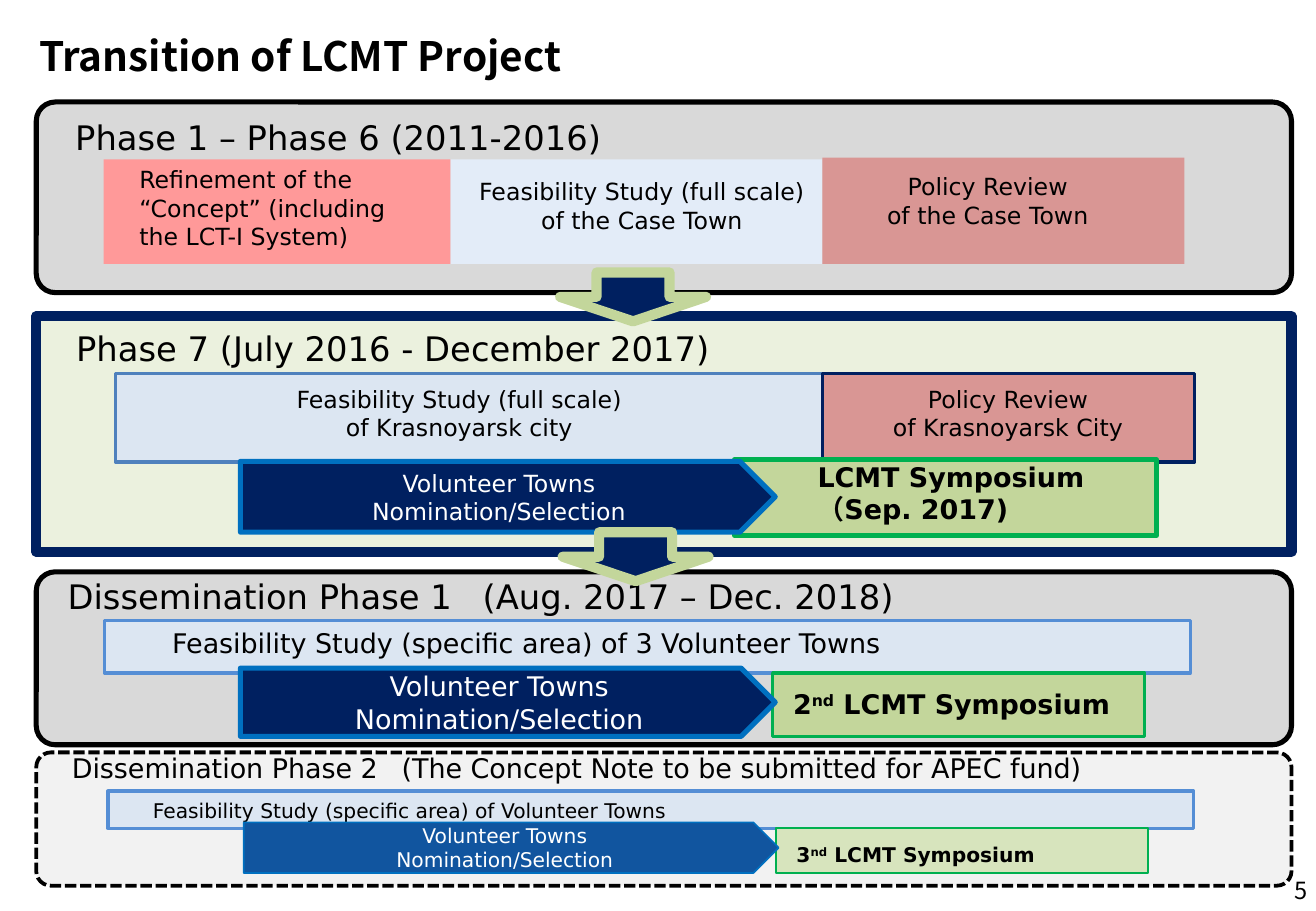
from lxml.etree import SubElement
from pptx import Presentation
from pptx.dml.color import RGBColor
from pptx.enum.dml import MSO_LINE
from pptx.enum.shapes import MSO_SHAPE as SHAPE
from pptx.enum.text import MSO_ANCHOR as ANCHOR, MSO_AUTO_SIZE, PP_ALIGN as ALIGN
from pptx.oxml.ns import qn
from pptx.util import Pt

BODY_FONT, TITLE_FONT = "DejaVu Sans", "Noto Sans CJK JP"
COLORS = {
    "black": "000000", "white": "FFFFFF", "gray": "D9D9D9", "light gray": "F2F2F2",
    "cream": "EBF1DE", "navy": "002060", "ice": "E3ECF8", "pink": "FF9999",
    "rose": "D99694", "pale blue": "DCE6F2", "steel": "4F81BD", "sky": "558ED5",
    "olive": "C3D69B", "pale olive": "D7E4BD", "green": "00B050",
    "azure": "0070C0", "blue": "11559F",
}


def add_box(kind, left, top, width, height, fill, line=None, weight=0):
    shape = slide.shapes.add_shape(kind, Pt(left), Pt(top), Pt(width), Pt(height))
    shape.shadow.inherit = False
    shape.fill.solid()
    shape.fill.fore_color.rgb = RGBColor.from_string(COLORS[fill])
    if line:
        shape.line.color.rgb = RGBColor.from_string(COLORS[line])
        shape.line.width = Pt(weight)
    else:
        shape.line.fill.background()
    return shape


def write(shape, lines, size, align=ALIGN.LEFT, color="black", bold=False,
          font=BODY_FONT, wrap=False, anchor=ANCHOR.TOP):
    frame = shape.text_frame
    frame.text = "\n".join(lines)
    frame.word_wrap = wrap
    frame.auto_size = MSO_AUTO_SIZE.NONE
    frame.vertical_anchor = anchor
    for paragraph in frame.paragraphs:
        paragraph.alignment = align
        paragraph.font.name = font
        paragraph.font.size = Pt(size)
        paragraph.font.bold = bold
        paragraph.font.color.rgb = RGBColor.from_string(COLORS[color])
    return frame


presentation = Presentation()
presentation.slide_width, presentation.slide_height = Pt(780), Pt(540)
slide = presentation.slides.add_slide(presentation.slide_layouts[5])

# Title
title = slide.shapes.title
title.left, title.top, title.width, title.height = Pt(16), Pt(15), Pt(749), Pt(36)
write(title, ["Transition of LCMT Project"], 24, bold=True, font=TITLE_FONT,
      wrap=True, anchor=ANCHOR.MIDDLE)

# Phase panels
for kind, top, height, corner, fill, line, weight in [
    (SHAPE.ROUNDED_RECTANGLE, 60.5, 113, 0.1, "gray", "black", 3),
    (SHAPE.ROUNDED_RECTANGLE, 339, 102.5, 0.11, "gray", "black", 3),
    (SHAPE.RECTANGLE, 187.5, 139.5, None, "cream", "navy", 6),
    (SHAPE.ROUNDED_RECTANGLE, 446, 79, 0.11, "light gray", "black", 2.25),
]:
    panel = add_box(kind, 21.5, top, 744, height, fill, line, weight)
    if corner:
        panel.adjustments[0] = corner
panel.line.dash_style = MSO_LINE.SQUARE_DOT

# Study, review and symposium boxes
for box in [
    (267, 94.5, 220.5, 62, "ice"),
    (61.5, 94.5, 205.5, 62, "pink"),
    (487.5, 93.5, 214.5, 63, "rose"),
    (68.5, 221.5, 419.5, 52.5, "pale blue", "steel", 2),
    (487.5, 221.5, 220.5, 52.5, "rose", "navy", 2),
    (435.5, 272.5, 250, 45, "olive", "green", 3),
    (62, 368, 643.5, 31, "pale blue", "sky", 2),
    (458, 399, 220.5, 37.5, "olive", "green", 2),
    (64, 469, 643.5, 22, "pale blue", "sky", 2),
    (460, 491, 220.5, 26.5, "pale olive", "green", 1),
]:
    add_box(SHAPE.RECTANGLE, *box)

# Headings and labels
study, review = "Feasibility Study (full scale)", "Policy Review"
for left, top, width, height, size, align, lines in [
    (37.5, 65.5, 400, 31.5, 20, ALIGN.LEFT, ["Phase 1 – Phase 6 (2011-2016)"]),
    (38, 191, 402.5, 31.5, 20, ALIGN.LEFT, ["Phase 7 (July 2016 - December 2017)"]),
    (75.5, 94.5, 185, 58, 14, ALIGN.LEFT,
     ["Refinement of the “Concept” (including the LCT-I System)"]),
    (275, 101.5, 211, 41, 14, ALIGN.CENTER, [study, "of the Case Town"]),
    (515, 98.5, 141, 41, 14, ALIGN.CENTER, [review, "of the Case Town"]),
    (161, 224.5, 222.5, 41, 14, ALIGN.CENTER, [study, "of Krasnoyarsk city"]),
    (521, 224.5, 153, 41, 14, ALIGN.CENTER, [review, "of Krasnoyarsk City"]),
    (95, 368, 613, 26.5, 16, ALIGN.LEFT,
     ["Feasibility Study (specific area) of 3 Volunteer Towns"]),
    (83.5, 469.5, 613, 21.5, 12, ALIGN.LEFT,
     ["Feasibility Study (specific area) of Volunteer Towns"]),
]:
    label = slide.shapes.add_textbox(Pt(left), Pt(top), Pt(width), Pt(height))
    write(label, lines, size, align, wrap=align == ALIGN.LEFT)

# Dissemination headings, with a tab stop before the bracket
for left, top, width, size, stop, text in [
    (33, 337.5, 519, 20, 246, "Dissemination Phase 1\t(Aug. 2017 – Dec. 2018)"),
    (35.5, 442, 627, 16, 195.5,
     "Dissemination Phase 2\t(The Concept Note to be submitted for APEC fund)"),
]:
    heading = slide.shapes.add_textbox(Pt(left), Pt(top), Pt(width), Pt(size * 1.6))
    paragraph = write(heading, [text], size).paragraphs[0]
    properties = paragraph.font._element.getparent()
    tabs = SubElement(properties, qn("a:tabLst"))
    SubElement(tabs, qn("a:tab"), pos=str(Pt(stop)), algn="l")
    properties.insert(0, tabs)

# Symposium names
symposium = slide.shapes.add_textbox(Pt(477.5), Pt(269.5), Pt(173.5), Pt(46))
write(symposium, ["LCMT Symposium", "（Sep. 2017)"], 16, bold=True)
for left, top, width, size, number in [(463, 404, 213, 16, "2"), (465, 496, 157.5, 12, "3")]:
    symposium = slide.shapes.add_textbox(Pt(left), Pt(top), Pt(width), Pt(size * 1.7))
    paragraph = write(symposium, [number], size, bold=True).paragraphs[0]
    ordinal = paragraph.add_run()
    ordinal.text = "nd"
    ordinal.font._element.set("baseline", "30000")
    paragraph.add_run().text = " LCMT Symposium"

# Volunteer town pentagons
for left, top, height, fill, weight, size in [
    (142.5, 273.5, 42, "navy", 3, 14),
    (142.5, 396, 40.5, "navy", 3, 16),
    (144.5, 487.5, 30, "blue", 1, 12),
]:
    pentagon = add_box(SHAPE.PENTAGON, left, top, 317, height, fill, "azure", weight)
    write(pentagon, ["Volunteer Towns", "Nomination/Selection"], size, ALIGN.CENTER,
          "white", wrap=True, anchor=ANCHOR.MIDDLE)

# Arrows between phases
for left, top in [(332, 161.5), (333.5, 315.5)]:
    add_box(SHAPE.DOWN_ARROW, left, top, 86.5, 29, "navy", "olive", 6)

# Page number
page_number = slide.shapes.add_textbox(Pt(600), Pt(513.5), Pt(182), Pt(28.5))
write(page_number, ["5"], 14, ALIGN.RIGHT, font=TITLE_FONT, wrap=True, anchor=ANCHOR.MIDDLE)

presentation.save("out.pptx")
